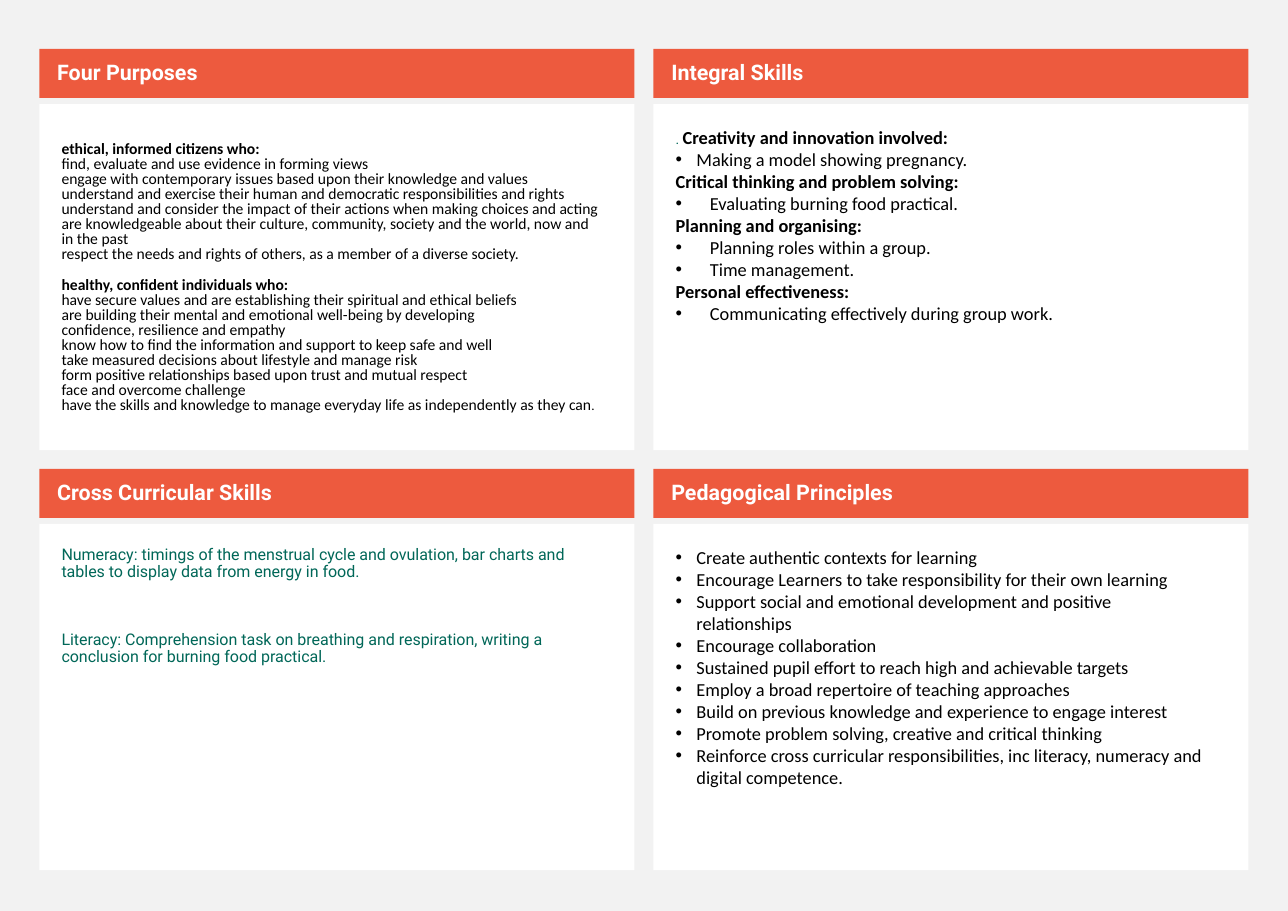
"""Build a slide with four titled panels of curriculum notes."""
from lxml.etree import SubElement
from pptx import Presentation
from pptx.dml.color import RGBColor
from pptx.enum.shapes import MSO_SHAPE
from pptx.enum.text import MSO_ANCHOR, PP_ALIGN
from pptx.oxml.ns import qn
from pptx.util import Cm, Pt

HUES = {"back": "F2F2F2", "head": "ED5A3E", "card": "FFFFFF",
        "ink": "000000", "green": "006758"}

AIMS = [
    ("ethical, informed citizens who:", [
        "find, evaluate and use evidence in forming views",
        "engage with contemporary issues based upon their knowledge and values",
        "understand and exercise their human and democratic responsibilities and rights",
        "understand and consider the impact of their actions when making choices and acting",
        "are knowledgeable about their culture, community, society and the world, now and/in the past",
        "respect the needs and rights of others, as a member of a diverse society."]),
    ("healthy, confident individuals who:", [
        "have secure values and are establishing their spiritual and ethical beliefs",
        "are building their mental and emotional well-being by developing/confidence, resilience and empathy",
        "know how to find the information and support to keep safe and well",
        "take measured decisions about lifestyle and manage risk",
        "form positive relationships based upon trust and mutual respect",
        "face and overcome challenge",
        "have the skills and knowledge to manage everyday life as independently as they can"])]

SKILLS = [
    ("Creativity and innovation involved:", 0.48, ["Making a model showing pregnancy."]),
    ("Critical thinking and problem solving:", 0.79, ["Evaluating burning food practical."]),
    ("Planning and organising:", 0.79, ["Planning roles within a group.", "Time management."]),
    ("Personal effectiveness:", 0.79, ["Communicating effectively during group work."])]

CROSS = [
    ("Numeracy: timings of the menstrual cycle and ovulation, bar charts and tables "
     "to display data from energy in food.", 11),
    ("Literacy: Comprehension task on breathing and respiration, writing a "
     "conclusion for burning food practical.", 33)]

RULES = [
    "Create authentic contexts for learning",
    "Encourage Learners to take responsibility for their own learning",
    "Support social and emotional development and positive/relationships",
    "Encourage collaboration",
    "Sustained pupil effort to reach high and achievable targets",
    "Employ a broad repertoire of teaching approaches",
    "Build on previous knowledge and experience to engage interest",
    "Promote problem solving, creative and critical thinking",
    "Reinforce cross curricular responsibilities, inc literacy, numeracy and digital competence."]


def write(frame, text, *, font="Calibri", size=12, hue="ink", bold=False,
          line=1.0, before=0, indent=0, join=False):
    """Add a paragraph, or join its text to the last one; a slash breaks the line."""
    para = frame.paragraphs[-1]
    if para.runs and not join:
        para = frame.add_paragraph()
    if not join:
        para.alignment = PP_ALIGN.LEFT
        para.line_spacing = line
        para.space_before = Pt(before)
    if indent:
        props = para._p.get_or_add_pPr()
        props.set("marL", str(Cm(indent)))
        props.set("indent", str(-Cm(indent)))
        SubElement(props, qn("a:buFont")).set("typeface", "Arial")
        SubElement(props, qn("a:buChar")).set("char", "•")
    for i, part in enumerate(text.split("/")):
        if i:
            para.add_line_break()
        run = para.add_run()
        run.text = part
        run.font.name, run.font.size, run.font.bold = font, Pt(size), bold
        run.font.color.rgb = RGBColor.from_string(HUES[hue])


class Board:
    """Hold the slide and the grid on which its panels sit."""

    left, top, wide = 0.91, 1.13, 13.72
    step, drop = 14.16, 9.68

    def __init__(self, slide):
        """Keep the slide and paint its background."""
        self.slide = slide
        fill = slide.background.fill
        fill.solid()
        fill.fore_color.rgb = RGBColor.from_string(HUES["back"])

    def block(self, x, y, high, hue, pads, anchor):
        """Draw a plain block and return its text frame."""
        shape = self.slide.shapes.add_shape(
            MSO_SHAPE.RECTANGLE, Cm(x), Cm(y), Cm(self.wide), Cm(high))
        shape.shadow.inherit = False
        shape.fill.solid()
        shape.fill.fore_color.rgb = RGBColor.from_string(HUES[hue])
        shape.line.fill.background()
        frame = shape.text_frame
        frame.word_wrap = True
        frame.vertical_anchor = anchor
        (frame.margin_left, frame.margin_top,
         frame.margin_right, frame.margin_bottom) = map(Cm, pads)
        return frame

    def panel(self, col, row, title, pad=0.51):
        """Draw a title bar with a card below and return the card's frame."""
        x, y = self.left + col * self.step, self.top + row * self.drop
        bar = self.block(x, y, 1.13, "head", (0.41, 0.13, 0.25, 0.13), MSO_ANCHOR.MIDDLE)
        write(bar, title, font="Roboto", size=14, hue="card", bold=True, line=0.9, before=11)
        return self.block(x, y + 1.27, 7.98, "card", (0.51, pad, 0.51, 0.51), MSO_ANCHOR.TOP)


def main():
    """Fill the four panels and save the deck."""
    deck = Presentation()
    deck.slide_width, deck.slide_height = Cm(29.7), Cm(21)
    board = Board(deck.slides.add_slide(deck.slide_layouts[6]))

    card = board.panel(0, 0, "Four Purposes", pad=0.89)
    for i, (head, points) in enumerate(AIMS):
        write(card, head, size=10.2, bold=True, line=0.8, before=10 * i)
        for point in points:
            write(card, point, size=10.2, line=0.8)
    write(card, ".", size=8.5, join=True)

    card = board.panel(1, 0, "Integral Skills")
    write(card, ". ", font="Roboto", size=9, hue="green")
    for i, (head, indent, points) in enumerate(SKILLS):
        write(card, head, bold=True, join=i == 0)
        for point in points:
            write(card, point, indent=indent)

    card = board.panel(0, 1, "Cross Curricular Skills")
    for text, before in CROSS:
        write(card, text, font="Roboto", size=10.5, hue="green", line=0.9, before=before)

    card = board.panel(1, 1, "Pedagogical Principles")
    for rule in RULES:
        write(card, rule, indent=0.48)

    deck.save("out.pptx")


if __name__ == "__main__":
    main()
